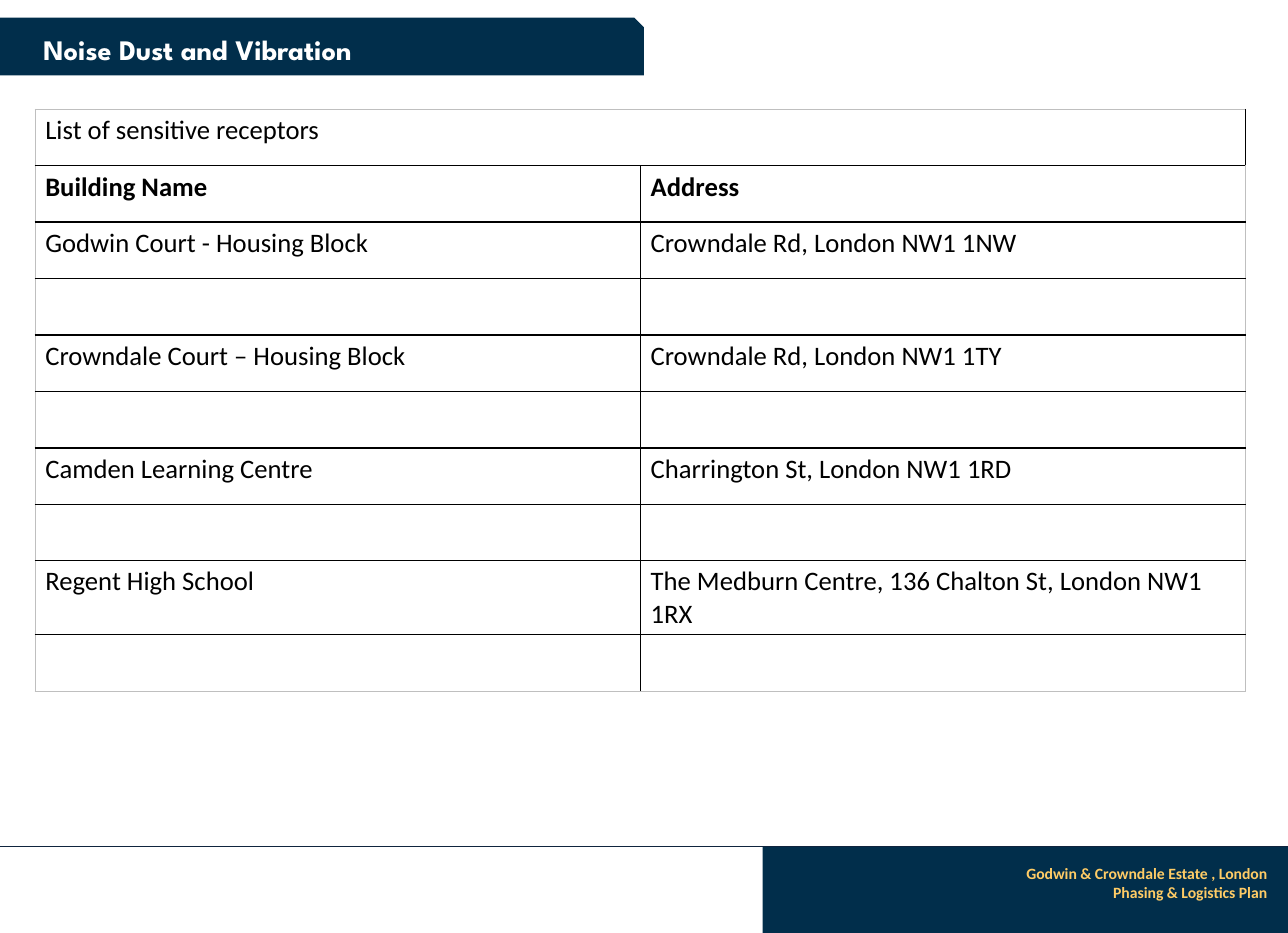
from lxml import etree
from pptx import Presentation
from pptx import util as u
from pptx.dml.color import RGBColor
from pptx.enum import shapes, text
from pptx.oxml import ns

COLORS = {"navy": "012E4B", "rule": "0F243E", "gold": "FFCC66",
          "white": "FFFFFF", "black": "000000", "grey": "BFBFBF"}
RECEPTORS = [
    ("Godwin Court - Housing Block", "Crowndale Rd, London NW1 1NW"),
    ("Crowndale Court – Housing Block", "Crowndale Rd, London NW1 1TY"),
    ("Camden Learning Centre", "Charrington St, London NW1 1RD"),
    ("Regent High School", "The Medburn Centre, 136 Chalton St, London NW1 1RX"),
]


def rgb(name):
    return RGBColor.from_string(COLORS[name])


def write(tf, lines, size=17, font="Calibri", color="black", bold=False,
          align=text.PP_ALIGN.LEFT):
    tf.word_wrap = True
    for i, line in enumerate(lines.split("\n")):
        p = tf.paragraphs[0] if i == 0 else tf.add_paragraph()
        p.alignment = align
        r = p.add_run()
        r.text = line
        r.font.size = u.Pt(size)
        r.font.name = font
        r.font.bold = bold
        r.font.color.rgb = rgb(color)


def add_text(s, box, lines, anchor=text.MSO_ANCHOR.TOP, **fmt):
    tf = s.shapes.add_textbox(*map(u.Cm, box)).text_frame
    tf.vertical_anchor = anchor
    write(tf, lines, **fmt)


def add_band(s, kind, box):
    sp = s.shapes.add_shape(kind, *map(u.Cm, box))
    sp.shadow.inherit = False
    sp.fill.solid()
    sp.fill.fore_color.rgb = rgb("navy")
    sp.line.fill.background()


def add_rule(s, y, width):
    line = s.shapes.add_connector(shapes.MSO_CONNECTOR.STRAIGHT,
                                  0, u.Cm(y), width, u.Cm(y))
    line.line.color.rgb = rgb("rule")
    line.line.width = u.Pt(0.75)
    etree.SubElement(line._element.spPr, ns.qn("a:effectLst"))


def set_border(cell, side, color, width):
    ln = etree.SubElement(cell._tc.get_or_add_tcPr(), ns.qn(f"a:ln{side}"),
                          w=str(u.Pt(width)))
    fill = etree.SubElement(ln, ns.qn("a:solidFill"))
    etree.SubElement(fill, ns.qn("a:srgbClr"), val=COLORS[color])


def add_receptor_table(s, left, top, width, row_height):
    rows = [("List of sensitive receptors", ""), ("Building Name", "Address")]
    for receptor in RECEPTORS:
        rows += [receptor, ("", "")]
    table = s.shapes.add_table(len(rows), 2, u.Cm(left), u.Cm(top), u.Cm(width),
                               u.Cm(row_height * len(rows))).table
    table.first_row = table.horz_banding = False
    for i, row in enumerate(rows):
        for j, value in enumerate(row):
            cell = table.cell(i, j)
            cell.margin_left = cell.margin_right = u.Cm(0.23)
            cell.margin_top = cell.margin_bottom = u.Cm(0.11)
            outer = {"L": j == 0, "R": j == 1, "T": i == 0,
                     "B": i == len(rows) - 1}
            for side, is_outer in outer.items():
                set_border(cell, side, *(("grey", 0.5) if is_outer else ("black", 1)))
            cell.fill.solid()
            cell.fill.fore_color.rgb = rgb("white")
            if value:
                write(cell.text_frame, value, bold=i == 1)
    table.cell(0, 0).merge(table.cell(0, 1))


def main():
    prs = Presentation()
    prs.slide_width, prs.slide_height = u.Cm(29), u.Cm(21)
    s = prs.slides.add_slide(prs.slide_layouts[6])
    add_band(s, shapes.MSO_SHAPE.RECTANGLE, (17.17, 19.05, 11.83, 1.95))
    add_band(s, shapes.MSO_SHAPE.SNIP_1_RECTANGLE, (0, 0.4, 14.5, 1.3))
    add_rule(s, 19.05, prs.slide_width)
    add_text(s, (17.32, 19.33, 11.46, 1.12),
             "Godwin & Crowndale Estate , London\nPhasing & Logistics Plan",
             size=10, color="gold", bold=True, align=text.PP_ALIGN.RIGHT)
    add_text(s, (0.2, 0.4, 8.5, 1.42), "Noise Dust and Vibration",
             anchor=text.MSO_ANCHOR.MIDDLE, size=18, font="League Spartan",
             color="white", bold=True, align=text.PP_ALIGN.CENTER)
    add_receptor_table(s, 0.79, 2.46, 27.26, 1.27)
    prs.save("out.pptx")


if __name__ == "__main__":
    main()
